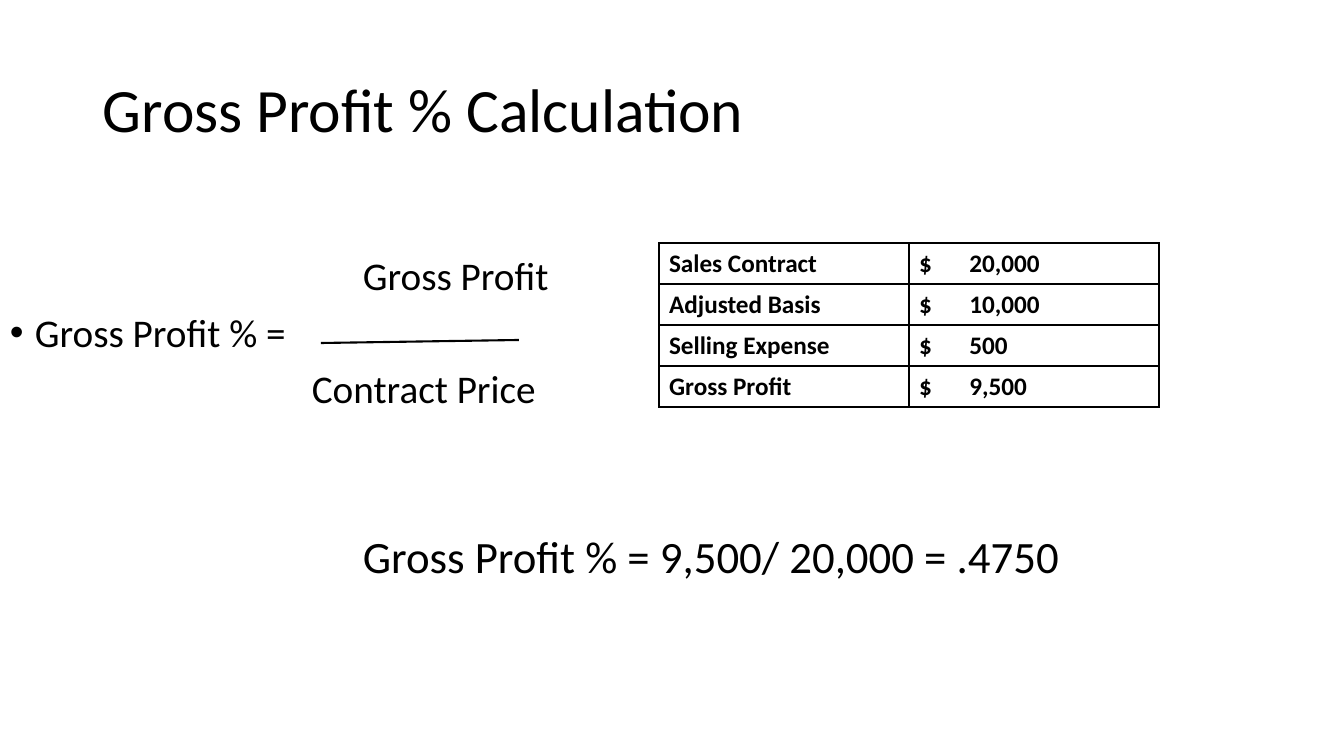
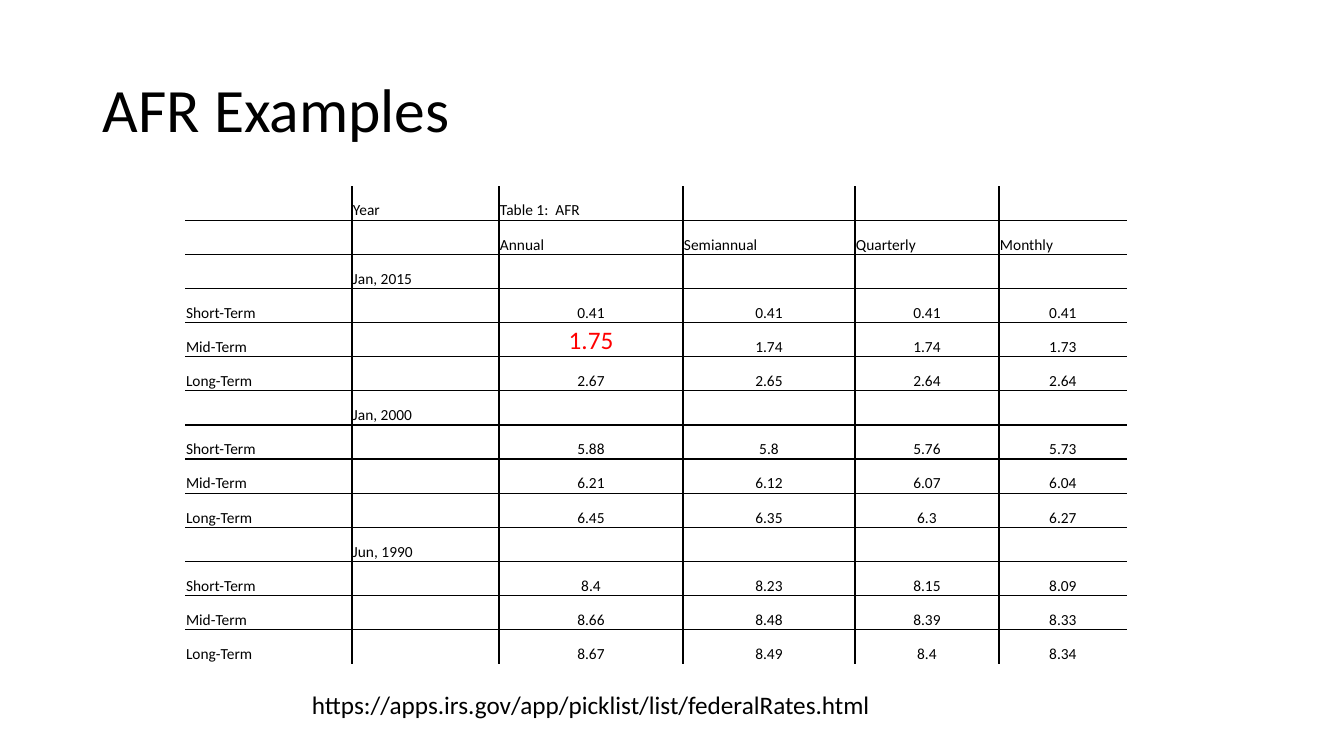
import pptx
import pptx.dml.color
import pptx.enum.shapes
import pptx.enum.text
import pptx.oxml
import pptx.oxml.ns
import pptx.util

COLORS = {"text": "000000", "line": "000000", "highlight": "FF0000"}
FONT = "Calibri"
SLIDE_SIZE = (1344, 756)
TITLE_BOX = (93, 40, 1159, 146)
ALIGN = pptx.enum.text.PP_ALIGN
ANCHOR = pptx.enum.text.MSO_ANCHOR

PROFIT_TITLE = "Gross Profit % Calculation"
FORMULA = [
    ("Gross Profit", {"indent": 353}),
    ("Gross Profit % =", {"indent": 25, "bullet": "•", "before": 10}),
    ("Contract Price", {"indent": 302, "before": 10}),
]
ANSWER = "Gross Profit % = 9,500/ 20,000 = .4750"
AMOUNTS = [
    ("Sales Contract", "20,000"),
    ("Adjusted Basis", "10,000"),
    ("Selling Expense", "500"),
    ("Gross Profit", "9,500"),
]
AMOUNT_TAB = 119

RATES_TITLE = "AFR Examples"
RATES_HEADER = [
    ("", "Year", "Table 1:  AFR", "", "", ""),
    ("", "", "Annual", "Semiannual", "Quarterly", "Monthly"),
]
TERMS = ("Short-Term", "Mid-Term", "Long-Term")
RATES = {
    "Jan, 2015": [
        ("0.41", "0.41", "0.41", "0.41"),
        ("1.75", "1.74", "1.74", "1.73"),
        ("2.67", "2.65", "2.64", "2.64"),
    ],
    "Jan, 2000": [
        ("5.88", "5.8", "5.76", "5.73"),
        ("6.21", "6.12", "6.07", "6.04"),
        ("6.45", "6.35", "6.3", "6.27"),
    ],
    "Jun, 1990": [
        ("8.4", "8.23", "8.15", "8.09"),
        ("8.66", "8.48", "8.39", "8.33"),
        ("8.67", "8.49", "8.4", "8.34"),
    ],
}
HIGHLIGHT = "1.75"
RATE_COLUMNS = (167, 147, 184, 172, 144, 128)
RATES_HEIGHT = 478
RATES_LINK = "https://apps.irs.gov/app/picklist/list/federalRates.html"


def px(length):
    return pptx.util.Emu(round(length * 914400 / 100.8))


def add_xml(parent, tag, **attributes):
    element = pptx.oxml.ns.qn(tag)
    child = parent.makeelement(element, attributes)
    parent.append(child)
    return child


def write(frame, text, size=18, color="text", bold=False, align=ALIGN.LEFT,
          spacing=None, before=0, indent=0, bullet=None, tab=None):
    paragraph = frame.paragraphs[0]
    if paragraph.runs:
        paragraph = frame.add_paragraph()
    paragraph.alignment = align
    paragraph.space_before = pptx.util.Pt(before)
    if spacing:
        paragraph.line_spacing = spacing
    properties = paragraph._p.get_or_add_pPr()
    properties.set("marL", str(px(indent)))
    properties.set("indent", str(-px(indent) if bullet else 0))
    if bullet:
        add_xml(properties, "a:buFont", typeface="Arial")
        add_xml(properties, "a:buChar", char=bullet)
    if tab:
        tabs = add_xml(properties, "a:tabLst")
        add_xml(tabs, "a:tab", pos=str(px(tab)), algn="r")
    run = paragraph.add_run()
    run.text = text
    run.font.name = FONT
    run.font.size = pptx.util.Pt(size)
    run.font.bold = bold
    run.font.color.rgb = pptx.dml.color.RGBColor.from_string(COLORS[color])


def add_text_frame(slide, box, anchor=ANCHOR.TOP):
    frame = slide.shapes.add_textbox(*map(px, box)).text_frame
    frame.word_wrap = True
    frame.vertical_anchor = anchor
    return frame


def add_titled_slide(presentation, title):
    slide = presentation.slides.add_slide(presentation.slide_layouts[6])
    write(add_text_frame(slide, TITLE_BOX, ANCHOR.MIDDLE), title, size=44, spacing=0.9)
    return slide


def set_borders(cell, visible):
    properties = cell._tc.get_or_add_tcPr()
    for side in "LRTB":
        line = add_xml(properties, f"a:ln{side}", w=str(pptx.util.Pt(1)))
        if side in visible:
            fill = add_xml(line, "a:solidFill")
            add_xml(fill, "a:srgbClr", val=COLORS["line"])
        else:
            add_xml(line, "a:noFill")
    cell.fill.background()


def add_grid(slide, left, top, widths, row_height, row_count, outer):
    column_count = len(widths)
    table = slide.shapes.add_table(
        row_count, column_count, px(left), px(top),
        px(sum(widths)), px(row_height * row_count)).table
    table.first_row = False
    table.horz_banding = False
    for column, width in zip(table.columns, widths):
        column.width = px(width)
    for row_index, row in enumerate(table.rows):
        row.height = px(row_height)
        for column_index, cell in enumerate(row.cells):
            inside = {
                "L": column_index > 0,
                "R": column_index < column_count - 1,
                "T": row_index > 0,
                "B": row_index < row_count - 1,
            }
            set_borders(cell, [side for side in inside if outer or inside[side]])
    return table


def build_profit_slide(presentation):
    slide = add_titled_slide(presentation, PROFIT_TITLE)
    table = add_grid(slide, 659, 243, (250, 250), 41, len(AMOUNTS), outer=True)
    for row, (label, amount) in zip(table.rows, AMOUNTS):
        write(row.cells[0].text_frame, label, bold=True)
        write(row.cells[1].text_frame, f"$\t{amount}", bold=True, tab=AMOUNT_TAB)

    formula = add_text_frame(slide, (0, 252, 650, 175))
    for text, layout in FORMULA:
        write(formula, text, size=28, spacing=0.9, **layout)
    fraction_bar = slide.shapes.add_connector(
        pptx.enum.shapes.MSO_CONNECTOR.STRAIGHT, *map(px, (321, 343, 519, 340)))
    fraction_bar.line.width = pptx.util.Pt(1.5)
    fraction_bar.line.color.rgb = pptx.dml.color.RGBColor.from_string(COLORS["line"])
    add_xml(fraction_bar._element.spPr, "a:effectLst")
    write(add_text_frame(slide, (353, 524, 760, 65)), ANSWER, size=32)


def build_rates_slide(presentation):
    rows = list(RATES_HEADER)
    for period, rates in RATES.items():
        rows.append(("", period, "", "", "", ""))
        rows.extend((term, "", *values) for term, values in zip(TERMS, rates))

    slide = add_titled_slide(presentation, RATES_TITLE)
    table = add_grid(slide, 185, 186, RATE_COLUMNS, RATES_HEIGHT / len(rows),
                     len(rows), outer=False)
    for row, texts in zip(table.rows, rows):
        for column_index, (cell, text) in enumerate(zip(row.cells, texts)):
            cell.vertical_anchor = ANCHOR.BOTTOM
            cell.margin_left = cell.margin_right = cell.margin_top = px(1)
            cell.margin_bottom = 0
            if not text:
                continue
            is_rate = column_index > 1 and texts[0] in TERMS
            is_highlight = text == HIGHLIGHT
            write(cell.text_frame, text,
                  size=18 if is_highlight else 11,
                  color="highlight" if is_highlight else "text",
                  align=ALIGN.CENTER if is_rate else ALIGN.LEFT)
    write(add_text_frame(slide, (302, 684, 600, 72)), RATES_LINK)


def main():
    presentation = pptx.Presentation()
    presentation.slide_width, presentation.slide_height = map(px, SLIDE_SIZE)
    build_profit_slide(presentation)
    build_rates_slide(presentation)
    presentation.save("out.pptx")


if __name__ == "__main__":
    main()
